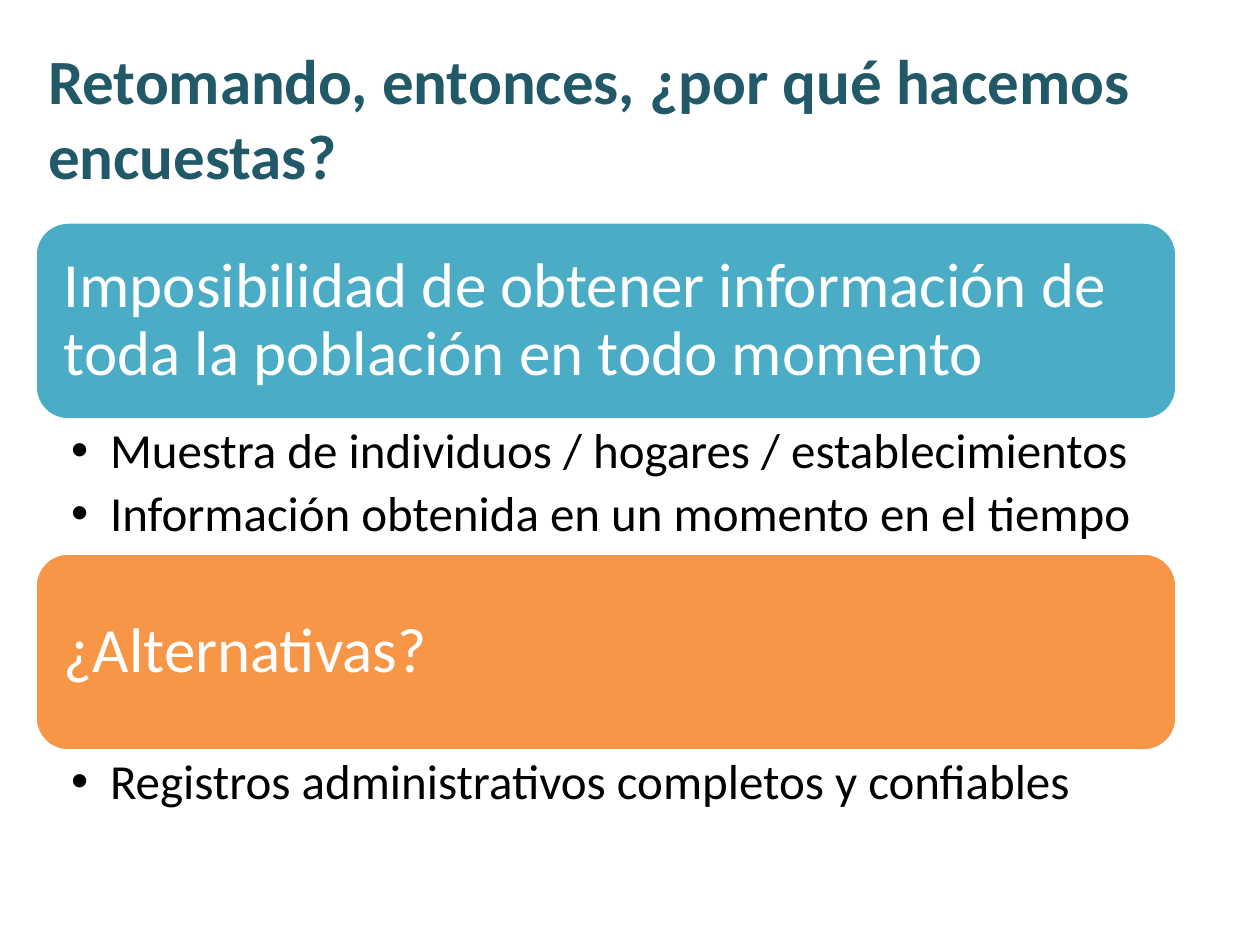
import pptx
import pptx.dml.color
import pptx.enum.shapes
import pptx.enum.text
import pptx.oxml.ns
import pptx.util
from lxml import etree

PX = 914400 / 126
FONT = "Calibri"
COLORS = {
    "title": "215968",
    "problem": "4BACC6",
    "alternative": "F79646",
    "white": "FFFFFF",
    "black": "000000",
}
LEFT, TOP, WIDTH = 35, 222, 1142
BAND_HEIGHT = 198
SECTIONS = [
    (
        "problem",
        "Imposibilidad de obtener información de toda la población en todo momento",
        [
            "Muestra de individuos / hogares / establecimientos",
            "Información obtenida en un momento en el tiempo",
        ],
        133,
    ),
    (
        "alternative",
        "¿Alternativas?",
        ["Registros administrativos completos y confiables"],
        82,
    ),
]


def px(length):
    """Turn px into EMU."""
    return pptx.util.Emu(round(length * PX))


def rgb(name):
    """Return a named colour."""
    return pptx.dml.color.RGBColor.from_string(COLORS[name])


def place(part, left, top, width, height):
    """Set the position and size of a placeholder."""
    part.left, part.top = px(left), px(top)
    part.width, part.height = px(width), px(height)


def set_frame(frame, horizontal, vertical, anchor):
    """Set wrapping, insets and anchor of a text frame."""
    frame.word_wrap = True
    frame.auto_size = pptx.enum.text.MSO_AUTO_SIZE.NONE
    frame.margin_left = frame.margin_right = px(horizontal)
    frame.margin_top = frame.margin_bottom = px(vertical)
    frame.vertical_anchor = anchor


def write(paragraph, text, size, color, bold=False, spacing=0.9, after=0):
    """Write one left-aligned run with its paragraph spacing."""
    paragraph.alignment = pptx.enum.text.PP_ALIGN.LEFT
    paragraph.line_spacing = spacing
    paragraph.space_before = pptx.util.Pt(0)
    paragraph.space_after = pptx.util.Pt(after)
    run = paragraph.add_run()
    run.text = text
    run.font.name = FONT
    run.font.size = pptx.util.Pt(size)
    run.font.bold = bold
    run.font.color.rgb = rgb(color)


def add_bullet(paragraph):
    """Give a paragraph a hanging round bullet."""
    properties = paragraph._p.get_or_add_pPr()
    properties.set("marL", str(px(39)))
    properties.set("indent", str(px(-39)))
    bullet = etree.SubElement(properties, pptx.oxml.ns.qn("a:buChar"))
    bullet.set("char", "•")


def fill_title(title, text):
    """Place and write the slide title."""
    place(title, LEFT, 38, 1131, 158)
    set_frame(title.text_frame, 13, 6, pptx.enum.text.MSO_ANCHOR.MIDDLE)
    write(title.text_frame.paragraphs[0], text, 36, "title", bold=True, spacing=1.0)


def add_band(slide, top, heading, color):
    """Add a rounded band holding a section heading."""
    band = slide.shapes.add_shape(
        pptx.enum.shapes.MSO_SHAPE.ROUNDED_RECTANGLE,
        px(LEFT), px(top), px(WIDTH), px(BAND_HEIGHT),
    )
    band.shadow.inherit = False
    band.fill.solid()
    band.fill.fore_color.rgb = rgb(color)
    band.line.color.rgb = rgb("white")
    band.line.width = pptx.util.Pt(2)
    set_frame(band.text_frame, 19, 19, pptx.enum.text.MSO_ANCHOR.MIDDLE)
    write(band.text_frame.paragraphs[0], heading, 36, "white")


def fill_list(body, top, height, items):
    """Place a body placeholder and write its bulleted items."""
    place(body, LEFT, top, WIDTH, height)
    frame = body.text_frame
    set_frame(frame, 36, 6, pptx.enum.text.MSO_ANCHOR.TOP)
    for index, item in enumerate(items):
        paragraph = frame.add_paragraph() if index else frame.paragraphs[0]
        paragraph.level = 1
        add_bullet(paragraph)
        write(paragraph, item, 28, "black", after=5.6)


def main():
    """Build and save the slide."""
    presentation = pptx.Presentation()
    presentation.slide_width, presentation.slide_height = px(1260), px(945)
    slide = presentation.slides.add_slide(presentation.slide_layouts[3])
    title, *bodies = list(slide.placeholders)[:3]
    fill_title(title, "Retomando, entonces, ¿por qué hacemos encuestas?")
    top = TOP
    for body, (color, heading, items, list_height) in zip(bodies, SECTIONS):
        add_band(slide, top, heading, color)
        fill_list(body, top + BAND_HEIGHT, list_height, items)
        top += BAND_HEIGHT + list_height
    presentation.save("out.pptx")


if __name__ == "__main__":
    main()
